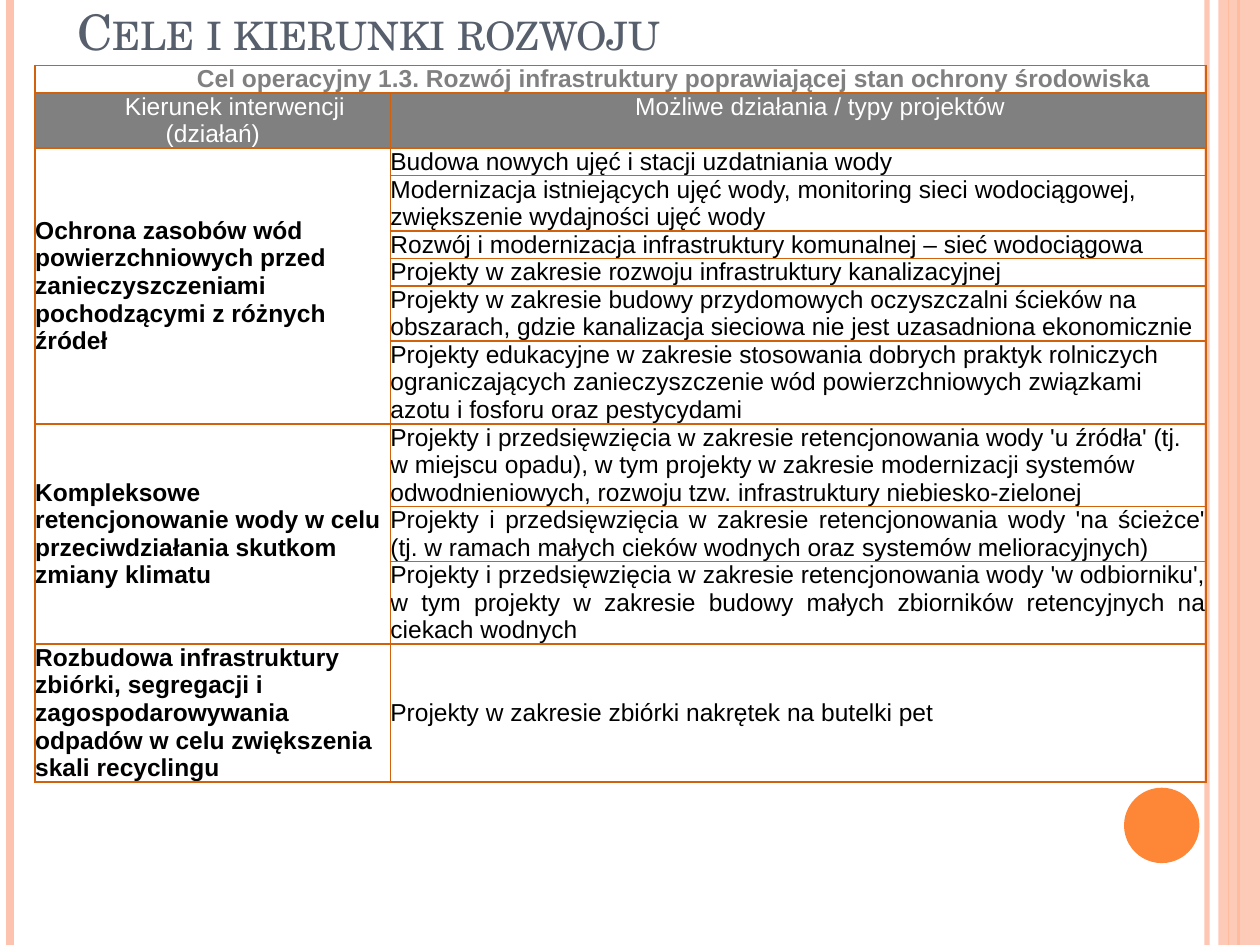
from lxml import etree
from pptx import Presentation
from pptx.dml.color import RGBColor
from pptx.enum import shapes as sh, text as tx
from pptx.oxml.ns import qn
from pptx.util import Cm, Pt

TITLE = "Cele i kierunki rozwoju"
GOAL = "Cel operacyjny 1.3. Rozwój infrastruktury poprawiającej stan ochrony środowiska"
HEADS = ["Kierunek interwencji (działań)", "Możliwe działania / typy projektów"]
LEFT, JUST = tx.PP_ALIGN.LEFT, tx.PP_ALIGN.JUSTIFY
MID, TOP = tx.MSO_ANCHOR.MIDDLE, tx.MSO_ANCHOR.TOP
GROUPS = [
    ("Ochrona zasobów wód powierzchniowych przed zanieczyszczeniami pochodzącymi z różnych źródeł", MID, [
        ("Budowa nowych ujęć i stacji uzdatniania wody", 1, LEFT),
        ("Modernizacja istniejących ujęć wody, monitoring sieci wodociągowej, zwiększenie wydajności ujęć wody", 2, LEFT),
        ("Rozwój i modernizacja infrastruktury komunalnej – sieć wodociągowa", 1, LEFT),
        ("Projekty w zakresie rozwoju infrastruktury kanalizacyjnej", 1, LEFT),
        ("Projekty w zakresie budowy przydomowych oczyszczalni ścieków na obszarach, gdzie kanalizacja sieciowa nie jest uzasadniona ekonomicznie", 2, LEFT),
        ("Projekty edukacyjne w zakresie stosowania dobrych praktyk rolniczych ograniczających zanieczyszczenie wód powierzchniowych związkami azotu i fosforu oraz pestycydami", 3, LEFT),
    ]),
    ("Kompleksowe retencjonowanie wody w celu przeciwdziałania skutkom zmiany klimatu", MID, [
        ("Projekty i przedsięwzięcia w zakresie retencjonowania wody 'u źródła' (tj. w miejscu opadu), w tym projekty w zakresie modernizacji systemów odwodnieniowych, rozwoju tzw. infrastruktury niebiesko-zielonej", 3, LEFT),
        ("Projekty i przedsięwzięcia w zakresie retencjonowania wody 'na ścieżce' (tj. w ramach małych cieków wodnych oraz systemów melioracyjnych)", 2, JUST),
        ("Projekty i przedsięwzięcia w zakresie retencjonowania wody 'w odbiorniku', w tym projekty w zakresie budowy małych zbiorników retencyjnych na ciekach wodnych", 3, JUST),
    ]),
    ("Rozbudowa infrastruktury zbiórki, segregacji i zagospodarowywania odpadów w celu zwiększenia skali recyclingu", TOP, [
        ("Projekty w zakresie zbiórki nakrętek na butelki pet", 5, LEFT),
    ]),
]
STRIPES = [(24.33, "FEC3AE", 3, 93), (0.2, "FEC3AE", 4.5, 100),
           (24.97, "FE8637", 1.5, 100), (24.77, "FE8637", 0.75, 100)]
PLATES = [(sh.MSO_SHAPE.RECTANGLE, (24.56, 0, 0.84, 19.05), "FEC3AE", 87),
          (sh.MSO_SHAPE.OVAL, (22.66, 15.88, 1.52, 1.52), "FE8637", 100)]
STEP = 0.55


def paint(fill, code, alpha=100):
    fill.solid()
    fill.fore_color.rgb = RGBColor.from_string(code)
    if alpha < 100:
        tone = fill._xPr.find(".//" + qn("a:srgbClr"))
        etree.SubElement(tone, qn("a:alpha"), val=str(alpha * 1000))


def style(para, size, face, code, bold=False):
    font = para.font
    font.size, font.name, font.bold = Pt(size), face, bold
    paint(font.fill, code)


def border(cell):
    props = cell._tc.get_or_add_tcPr()
    for side in ("lnL", "lnR", "lnT", "lnB"):
        line = etree.SubElement(props, qn("a:" + side), w=str(Pt(1)))
        fill = etree.SubElement(line, qn("a:solidFill"))
        etree.SubElement(fill, qn("a:srgbClr"), val="D2610C")


def write(cell, words, code="000000", bold=False, align=LEFT, anchor=MID, indent=None):
    cell.text = words
    cell.vertical_anchor = anchor
    para = cell.text_frame.paragraphs[0]
    para.alignment = align
    if indent:
        props = para._p.get_or_add_pPr()
        props.set("marL", str(Cm(indent[0])))
        props.set("indent", str(Cm(indent[1])))
    style(para, 14, "Arial", code, bold)


def add_frame(slide):
    for x, code, width, alpha in STRIPES:
        line = slide.shapes.add_connector(sh.MSO_CONNECTOR.STRAIGHT, Cm(x), 0, Cm(x), Cm(19.05))
        line.line.width = Pt(width)
        paint(line.line.fill, code, alpha)
        etree.SubElement(line._element.spPr, qn("a:effectLst"))
    for kind, box, code, alpha in PLATES:
        plate = slide.shapes.add_shape(kind, *map(Cm, box))
        plate.shadow.inherit = False
        plate.line.fill.background()
        paint(plate.fill, code, alpha)


def add_title(slide):
    title = slide.shapes.title
    title.left, title.top, title.width, title.height = map(Cm, (1.3, -0.28, 20.75, 1.63))
    frame = title.text_frame
    frame.text = TITLE
    frame.auto_size = tx.MSO_AUTO_SIZE.NONE
    frame.vertical_anchor = tx.MSO_ANCHOR.BOTTOM
    para = frame.paragraphs[0]
    para.alignment = LEFT
    style(para, 28, "TeX Gyre Schola", "575F6D")
    para.runs[0]._r.get_or_add_rPr().set("cap", "small")


def add_goals(slide):
    lines = [1, 2] + [count for _, _, tasks in GROUPS for _, count, _ in tasks]
    table = slide.shapes.add_table(len(lines), 2, Cm(0.71), Cm(1.32), Cm(23.6),
                                   Cm(STEP * sum(lines))).table
    table.first_row = table.horz_banding = False
    for col, width in zip(table.columns, (7.16, 16.44)):
        col.width = Cm(width)
    for row, count in zip(table.rows, lines):
        row.height = Cm(STEP * count)
    for cell in table.iter_cells():
        cell.margin_left = cell.margin_right = cell.margin_top = cell.margin_bottom = 0
        border(cell)
        cell.fill.background()
        style(cell.text_frame.paragraphs[0], 14, "Arial", "000000")

    mid = tx.PP_ALIGN.CENTER
    table.cell(0, 0).merge(table.cell(0, 1))
    write(table.cell(0, 0), GOAL, "808080", True, mid, TOP, (1.27, 0.89))
    for col, head in enumerate(HEADS):
        cell = table.cell(1, col)
        write(cell, head, "FFFFFF", False, mid, TOP, (0, 0.89))
        paint(cell.fill, "808080")
    row = 2
    for aim, anchor, tasks in GROUPS:
        if len(tasks) > 1:
            table.cell(row, 0).merge(table.cell(row + len(tasks) - 1, 0))
        write(table.cell(row, 0), aim, bold=True, anchor=anchor)
        for task, _, align in tasks:
            write(table.cell(row, 1), task, align=align)
            row += 1


def main():
    deck = Presentation()
    deck.slide_width, deck.slide_height = Cm(25.4), Cm(19.05)
    slide = deck.slides.add_slide(deck.slide_layouts[5])
    add_frame(slide)
    add_goals(slide)
    add_title(slide)
    deck.save("out.pptx")


if __name__ == "__main__":
    main()
